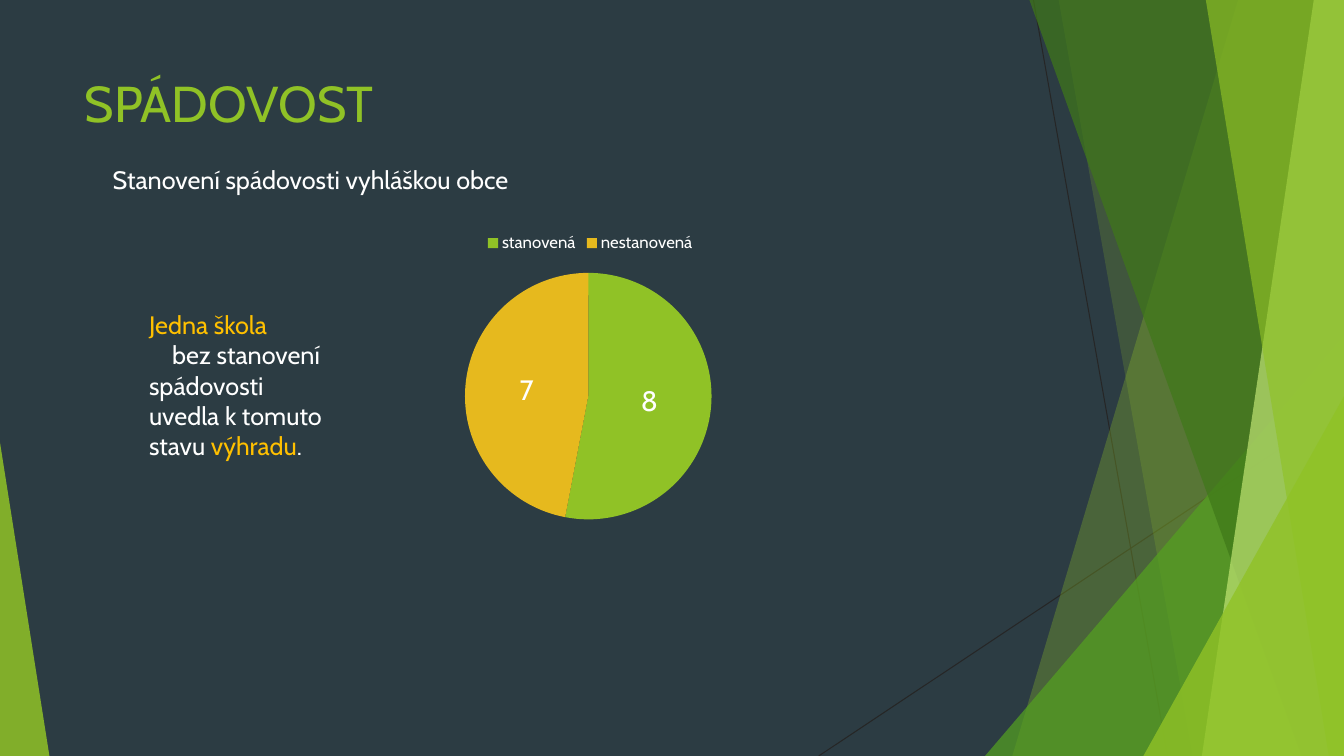
"""Build the SPÁDOVOST slide with a pie chart and layered green facets."""
import dataclasses

import lxml.etree
import pptx
import pptx.chart.data
import pptx.dml.color
import pptx.enum.chart
import pptx.enum.shapes
import pptx.enum.text
import pptx.oxml
import pptx.oxml.ns
import pptx.util

Inches = pptx.util.Inches
qn = pptx.oxml.ns.qn


@dataclasses.dataclass(frozen=True)
class Theme:
    """Colours, font and type sizes of the slide."""
    font: str = "Cabin"
    background: str = "2C3C43"
    hairline: str = "262626"
    green: str = "90C226"
    leaf: str = "54A021"
    forest: str = "3F7819"
    lime: str = "C0E474"
    gold: str = "E6B91E"
    accent: str = "FFC000"
    white: str = "FFFFFF"
    title_size: int = 36
    body_size: int = 18
    label_size: int = 20
    legend_size: int = 12
    line_width: float = 0.75


THEME = Theme()
WIDTH, HEIGHT = 13.33, 7.5

TITLE = ("SPÁDOVOST", (0.74, 0.67, 9.4, 1.44))
SUBTITLE = ([[("Stanovení spádovosti vyhláškou obce", THEME.white)]], (1.02, 1.58, 8.4, 0.4))
REMARK = (
    [
        [("Jedna škola", THEME.accent)],
        [
            ("bez stanovení spádovosti uvedla k tomuto stavu ", THEME.white),
            ("výhradu", THEME.accent),
            (".", THEME.white),
        ],
    ],
    (1.38, 3.02, 2.08, 1.62),
)
REMARK_INDENT = 0.23

CHART_BOX = (3.85, 2.2, 4.01, 3.09)
PLOT_LAYOUT = {"x": 0.19, "y": 0.16, "w": 0.61, "h": 0.8}
SLICES = [("stanovená", 53, "8", THEME.green), ("nestanovená", 47, "7", THEME.gold)]

HAIRLINES = [((10.25, 0), (11.58, HEIGHT)), ((WIDTH, 4.03), (8.12, HEIGHT))]
BAND, TRIANGLE = "band", "triangle"
FACETS = [
    (BAND, (12.28, 10.04), THEME.green, 30),
    (BAND, (10.5, 11.83), THEME.green, 20),
    (TRIANGLE, (9.77, 3.33, 3.56, 1), THEME.leaf, 72),
    (BAND, (10.21, 12.91), THEME.forest, 70),
    (BAND, (13.03, 11.92), THEME.lime, 70),
    (BAND, (11.96, 13.18), THEME.green, 65),
    (TRIANGLE, (11.34, 3.93, 1.99, 1), THEME.green, 80),
    (TRIANGLE, (0, 4.39, 0.49, 0), THEME.green, 85),
]


def rgb(colour):
    """Return a colour object for a hex string."""
    return pptx.dml.color.RGBColor.from_string(colour)


def style_font(font, size, colour=None):
    """Apply the theme font, a size and optionally a colour."""
    font.name, font.size, font.bold = THEME.font, pptx.util.Pt(size), False
    if colour:
        font.color.rgb = rgb(colour)


def place(shape, box):
    """Move and size a shape in inches."""
    shape.left, shape.top, shape.width, shape.height = map(Inches, box)


def add_hairline(page, start, end):
    """Draw one thin dark line."""
    straight = pptx.enum.shapes.MSO_CONNECTOR.STRAIGHT
    line = page.shapes.add_connector(straight, *map(Inches, start + end))
    line.line.color.rgb = rgb(THEME.hairline)
    line.line.width = pptx.util.Pt(THEME.line_width)
    lxml.etree.SubElement(line._element.spPr, qn("a:effectLst"))


def add_facet(page, kind, geometry, colour, opacity):
    """Draw one translucent band or corner triangle."""
    if kind == BAND:
        top, bottom = geometry
        corners = [(WIDTH, 0), (WIDTH, HEIGHT), (bottom, HEIGHT)]
        outline = page.shapes.build_freeform(Inches(top), 0)
        outline.add_line_segments([tuple(map(Inches, corner)) for corner in corners])
        facet = outline.convert_to_shape()
    else:
        left, top, width, apex = geometry
        facet = page.shapes.add_shape(
            pptx.enum.shapes.MSO_SHAPE.ISOSCELES_TRIANGLE,
            *map(Inches, (left, top, width, HEIGHT - top)),
        )
        facet.adjustments[0] = apex
    facet.shadow.inherit = False
    facet.line.fill.background()
    facet.fill.solid()
    facet.fill.fore_color.rgb = rgb(colour)
    tint = facet._element.spPr.find(qn("a:solidFill"))[0]
    lxml.etree.SubElement(tint, qn("a:alpha"), val=str(opacity * 1000))


def add_title(page):
    """Fill the title placeholder."""
    text, box = TITLE
    title = page.shapes.title
    place(title, box)
    title.text_frame.text = text
    title.text_frame.vertical_anchor = pptx.enum.text.MSO_ANCHOR.TOP
    para = title.text_frame.paragraphs[0]
    para.alignment = pptx.enum.text.PP_ALIGN.LEFT
    style_font(para.font, THEME.title_size, THEME.green)


def add_text(page, paragraphs, box):
    """Add a wrapped text box of coloured spans and return its frame."""
    frame = page.shapes.add_textbox(*map(Inches, box)).text_frame
    frame.word_wrap = True
    for index, spans in enumerate(paragraphs):
        para = frame.add_paragraph() if index else frame.paragraphs[0]
        style_font(para.font, THEME.body_size)
        for text, colour in spans:
            span = para.add_run()
            span.text = text
            style_font(span.font, THEME.body_size, colour)
    return frame


def add_pie(page):
    """Add the pie chart with its legend and slice labels."""
    names, values, _, _ = zip(*SLICES)
    table = pptx.chart.data.CategoryChartData()
    table.categories = names
    table.add_series("Series 1", values)
    pie = pptx.enum.chart.XL_CHART_TYPE.PIE
    chart = page.shapes.add_chart(pie, *map(Inches, CHART_BOX), table).chart
    style_font(chart.font, THEME.legend_size, THEME.white)
    chart.has_title = False
    chart.has_legend = True
    chart.legend.position = pptx.enum.chart.XL_LEGEND_POSITION.TOP
    chart.legend.include_in_layout = False
    style_font(chart.legend.font, THEME.legend_size, THEME.white)
    plot = chart.plots[0]
    plot.vary_by_categories = True
    for index, (_, _, text, colour) in enumerate(SLICES):
        point = plot.series[0].points[index]
        point.format.fill.solid()
        point.format.fill.fore_color.rgb = rgb(colour)
        label = point.data_label
        label.text_frame.text = text
        label.position = pptx.enum.chart.XL_LABEL_POSITION.CENTER
        style_font(label.text_frame.paragraphs[0].runs[0].font, THEME.label_size, THEME.white)
    area = chart._chartSpace.chart.plotArea
    for old in area.findall(qn("c:layout")):
        area.remove(old)
    layout = lxml.etree.Element(qn("c:layout"))
    manual = lxml.etree.SubElement(layout, qn("c:manualLayout"))
    settings = {"layoutTarget": "inner", "xMode": "edge", "yMode": "edge", **PLOT_LAYOUT}
    for name, value in settings.items():
        lxml.etree.SubElement(manual, qn("c:" + name), val=str(value))
    area.insert(0, layout)


def main():
    """Assemble and save the deck."""
    deck = pptx.Presentation()
    deck.slide_width, deck.slide_height = Inches(WIDTH), Inches(HEIGHT)
    page = deck.slides.add_slide(deck.slide_layouts.get_by_name("Title Only"))
    page.background.fill.solid()
    page.background.fill.fore_color.rgb = rgb(THEME.background)
    for start, end in HAIRLINES:
        add_hairline(page, start, end)
    for facet in FACETS:
        add_facet(page, *facet)
    add_title(page)
    add_pie(page)
    add_text(page, *SUBTITLE)
    remark = add_text(page, *REMARK)
    remark.paragraphs[1]._p.get_or_add_pPr().set("indent", str(Inches(REMARK_INDENT)))
    deck.save("out.pptx")


if __name__ == "__main__":
    main()
